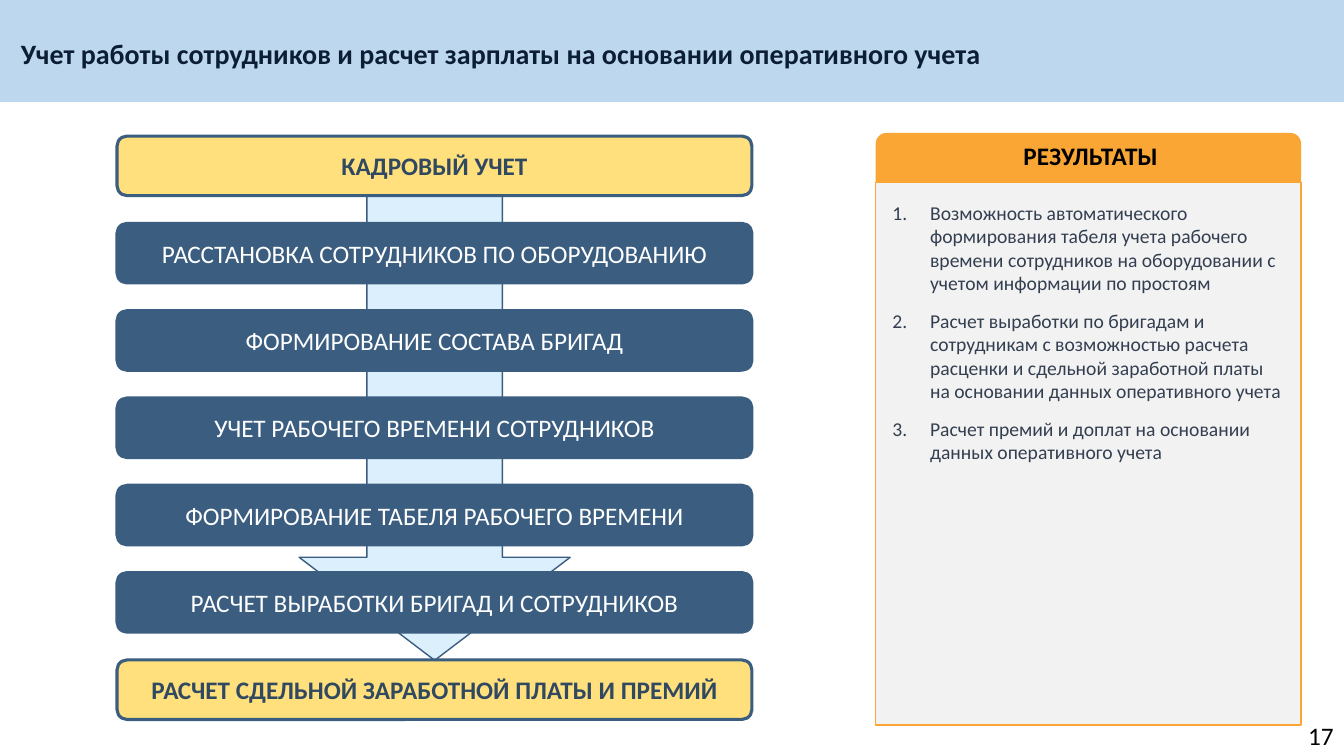
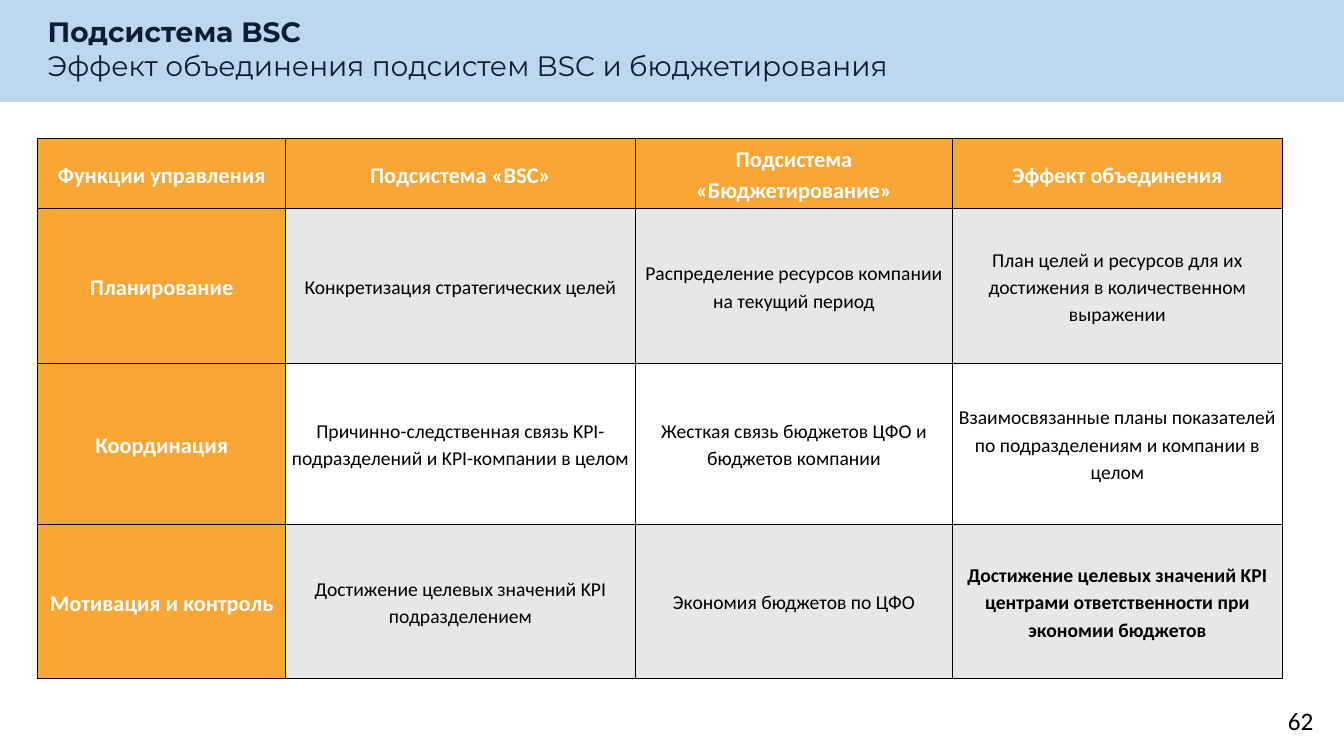
"""Builds two slides on payroll accounting and the BSC subsystem."""
from dataclasses import dataclass
from typing import Optional

from lxml import etree
from pptx import Presentation
from pptx import util as u
from pptx.dml.color import RGBColor
from pptx.enum import shapes, text
from pptx.oxml import ns

WHITE = RGBColor(0xFF, 0xFF, 0xFF)
BLACK = RGBColor(0x00, 0x00, 0x00)
BAND = RGBColor(0xBD, 0xD7, 0xEE)
TITLE = RGBColor(0x0C, 0x1E, 0x34)
NAVY = RGBColor(0x3A, 0x5D, 0x80)
STEP_TEXT = RGBColor(0x30, 0x49, 0x61)
SKY = RGBColor(0xDB, 0xF0, 0xFC)
YELLOW = RGBColor(0xFF, 0xE0, 0x7D)
ORANGE = RGBColor(0xFA, 0xA6, 0x34)
PANEL = RGBColor(0xF2, 0xF2, 0xF2)
RESULT_TEXT = RGBColor(0x33, 0x3F, 0x50)
GREY = RGBColor(0xE7, 0xE7, 0xE7)

LEFT, CENTER, RIGHT = text.PP_ALIGN.LEFT, text.PP_ALIGN.CENTER, text.PP_ALIGN.RIGHT
PRESET = shapes.MSO_SHAPE


@dataclass(frozen=True)
class Area:
    """A rectangle in centimetres."""
    left: float
    top: float
    width: float
    height: float

    def lengths(self) -> tuple:
        """Return the four sides as lengths."""
        return tuple(u.Cm(side) for side in (self.left, self.top, self.width, self.height))


@dataclass(frozen=True)
class Step:
    """One stage of the process."""
    label: str
    key: bool = False


@dataclass(frozen=True)
class TableRow:
    """One row of the comparison table."""
    height: float
    fill: RGBColor
    labels: tuple


STEPS = (
    Step("КАДРОВЫЙ УЧЕТ", key=True),
    Step("РАССТАНОВКА СОТРУДНИКОВ ПО ОБОРУДОВАНИЮ"),
    Step("ФОРМИРОВАНИЕ СОСТАВА БРИГАД"),
    Step("УЧЕТ РАБОЧЕГО ВРЕМЕНИ СОТРУДНИКОВ"),
    Step("ФОРМИРОВАНИЕ ТАБЕЛЯ РАБОЧЕГО ВРЕМЕНИ"),
    Step("РАСЧЕТ ВЫРАБОТКИ БРИГАД И СОТРУДНИКОВ"),
    Step("РАСЧЕТ СДЕЛЬНОЙ ЗАРАБОТНОЙ ПЛАТЫ И ПРЕМИЙ", key=True),
)
FIRST_STEP = Area(2.95, 3.43, 16, 1.5)
STEP_PITCH = 2.2

RESULTS = (
    "Возможность автоматического формирования табеля учета рабочего времени "
    "сотрудников на оборудовании с учетом информации по простоям",
    "Расчет выработки по бригадам и сотрудникам с возможностью расчета расценки "
    "и сдельной заработной платы на основании данных оперативного учета",
    "Расчет премий и доплат на основании данных оперативного учета",
)

COLUMN_WIDTHS = (6.25, 8.81, 8, 8.3)
TABLE_ROWS = (
    TableRow(1.78, ORANGE, ("Функции управления", "Подсистема «BSC»",
                            "Подсистема «Бюджетирование»", "Эффект объединения")),
    TableRow(3.89, GREY, ("Планирование", "Конкретизация стратегических целей",
                          "Распределение ресурсов компании на текущий период",
                          "План целей и ресурсов для их достижения в количественном выражении")),
    TableRow(4.06, WHITE, ("Координация",
                           "Причинно-следственная связь KPI-подразделений и KPI-компании в целом",
                           "Жесткая связь бюджетов ЦФО и бюджетов компании",
                           "Взаимосвязанные планы показателей по подразделениям и компании в целом")),
    TableRow(3.89, GREY, ("Мотивация и контроль", "Достижение целевых значений KPI подразделением",
                          "Экономия бюджетов по ЦФО",
                          "Достижение целевых значений KPI центрами ответственности при экономии бюджетов")),
)


def write(frame, *lines: str, size: float = 18, color: RGBColor = BLACK, font: str = "Calibri",
          bold: bool = False, bold_first: bool = False, align=LEFT, after: float = 0,
          spacing: float = 1, numbered: bool = False) -> None:
    """Fill a text frame with one formatted paragraph per line."""
    frame.word_wrap = True
    for index, line in enumerate(lines):
        paragraph = frame.add_paragraph() if index else frame.paragraphs[0]
        paragraph.alignment = align
        paragraph.line_spacing = spacing
        paragraph.space_after = u.Pt(after)
        if numbered:
            properties = paragraph._p.get_or_add_pPr()
            properties.set("marL", str(u.Cm(1.7)))
            properties.set("indent", str(-u.Cm(0.95)))
            etree.SubElement(properties, ns.qn("a:buFont"), typeface="+mj-lt")
            etree.SubElement(properties, ns.qn("a:buAutoNum"), type="arabicPeriod")
        run = paragraph.add_run()
        run.text = line
        run.font.name = font
        run.font.size = u.Pt(size)
        run.font.bold = bold or (bold_first and index == 0)
        run.font.color.rgb = color


def add_label(slide, area: Area, *lines: str, **style) -> None:
    """Add a text box."""
    write(slide.shapes.add_textbox(*area.lengths()).text_frame, *lines, **style)


def add_figure(slide, preset, area: Area, fill: RGBColor,
               line: Optional[RGBColor] = None, weight: float = 1):
    """Add a flat preset shape."""
    figure = slide.shapes.add_shape(preset, *area.lengths())
    figure.shadow.inherit = False
    figure.fill.solid()
    figure.fill.fore_color.rgb = fill
    if line is None:
        figure.line.fill.background()
    else:
        figure.line.color.rgb = line
        figure.line.width = u.Pt(weight)
    return figure


def start_slide(deck, title_area: Area, *title: str, font: str = "Calibri"):
    """Add a blank slide with the title band."""
    slide = deck.slides.add_slide(deck.slide_layouts[6])
    add_figure(slide, PRESET.RECTANGLE, Area(0, 0, 33.87, 2.57), BAND)
    add_label(slide, title_area, *title, size=20, color=TITLE, font=font, bold_first=True)
    return slide


def add_page_number(slide, number: int, left: float, top: float) -> None:
    """Add the slide number."""
    add_label(slide, Area(left, top, 7.62, 1.02), str(number), align=RIGHT)


def add_process(slide) -> None:
    """Draw the stages over a downward arrow."""
    arrow = add_figure(slide, PRESET.DOWN_ARROW, Area(7.54, 4.93, 6.83, 11.71), SKY, NAVY)
    arrow.adjustments[1] = 0.38
    for index, step in enumerate(STEPS):
        area = Area(FIRST_STEP.left, FIRST_STEP.top + index * STEP_PITCH,
                    FIRST_STEP.width, FIRST_STEP.height)
        stage = add_figure(slide, PRESET.ROUNDED_RECTANGLE, area,
                           YELLOW if step.key else NAVY, NAVY, 2.25)
        stage.text_frame.vertical_anchor = text.MSO_ANCHOR.MIDDLE
        write(stage.text_frame, step.label, color=STEP_TEXT if step.key else WHITE,
              bold=step.key, align=CENTER)


def add_results(slide) -> None:
    """Draw the panel with the numbered results."""
    add_figure(slide, PRESET.ROUNDED_RECTANGLE, Area(22.07, 3.35, 10.72, 1.63), ORANGE)
    add_figure(slide, PRESET.RECTANGLE, Area(22.07, 4.6, 10.72, 13.67), PANEL, ORANGE)
    add_label(slide, Area(22.15, 3.4, 10.67, 1.02), "РЕЗУЛЬТАТЫ", bold=True, align=CENTER)
    add_label(slide, Area(21.49, 4.93, 11.05, 7.9), *RESULTS, size=14, color=RESULT_TEXT,
              after=10, numbered=True)


def set_borders(cell) -> None:
    """Give a cell thin black borders."""
    properties = cell._tc.get_or_add_tcPr()
    for position, side in enumerate(("lnL", "lnR", "lnT", "lnB")):
        border = etree.Element(ns.qn(f"a:{side}"), w=str(u.Pt(1)))
        fill = etree.SubElement(border, ns.qn("a:solidFill"))
        etree.SubElement(fill, ns.qn("a:srgbClr"), val=str(BLACK))
        properties.insert(position, border)


def add_comparison(slide) -> None:
    """Draw the table of management functions."""
    area = Area(0.95, 3.48, sum(COLUMN_WIDTHS), sum(row.height for row in TABLE_ROWS))
    table = slide.shapes.add_table(len(TABLE_ROWS), len(COLUMN_WIDTHS), *area.lengths()).table
    table.first_row = table.horz_banding = False
    for column, width in zip(table.columns, COLUMN_WIDTHS):
        column.width = u.Cm(width)
    last = (len(TABLE_ROWS) - 1, len(COLUMN_WIDTHS) - 1)
    for r, row in enumerate(TABLE_ROWS):
        table.rows[r].height = u.Cm(row.height)
        for c, label in enumerate(row.labels):
            cell = table.cell(r, c)
            heading = r == 0 or c == 0
            cell.fill.solid()
            cell.fill.fore_color.rgb = ORANGE if heading else row.fill
            cell.vertical_anchor = text.MSO_ANCHOR.MIDDLE
            cell.margin_left = cell.margin_right = u.Cm(0.05)
            cell.margin_top = cell.margin_bottom = u.Cm(0.05)
            set_borders(cell)
            write(cell.text_frame, label, size=16 if heading else 14,
                  color=WHITE if heading else BLACK, bold=heading or (r, c) == last,
                  align=CENTER, after=10, spacing=1.15)


def main() -> None:
    """Build and save the deck."""
    deck = Presentation()
    deck.slide_width, deck.slide_height = u.Cm(33.87), u.Cm(19.05)

    payroll = start_slide(deck, Area(0.28, 0.79, 24.77, 1.12),
                          "Учет работы сотрудников и расчет зарплаты на основании оперативного учета")
    add_process(payroll)
    add_results(payroll)
    add_page_number(payroll, 17, 26.24, 18.03)

    scorecard = start_slide(deck, Area(0.95, 0.25, 23.1, 1.96), "Подсистема BSC",
                            "Эффект объединения подсистем BSC и бюджетирования", font="Montserrat")
    add_comparison(scorecard)
    add_page_number(scorecard, 62, 25.73, 17.65)

    deck.save("out.pptx")


if __name__ == "__main__":
    main()
